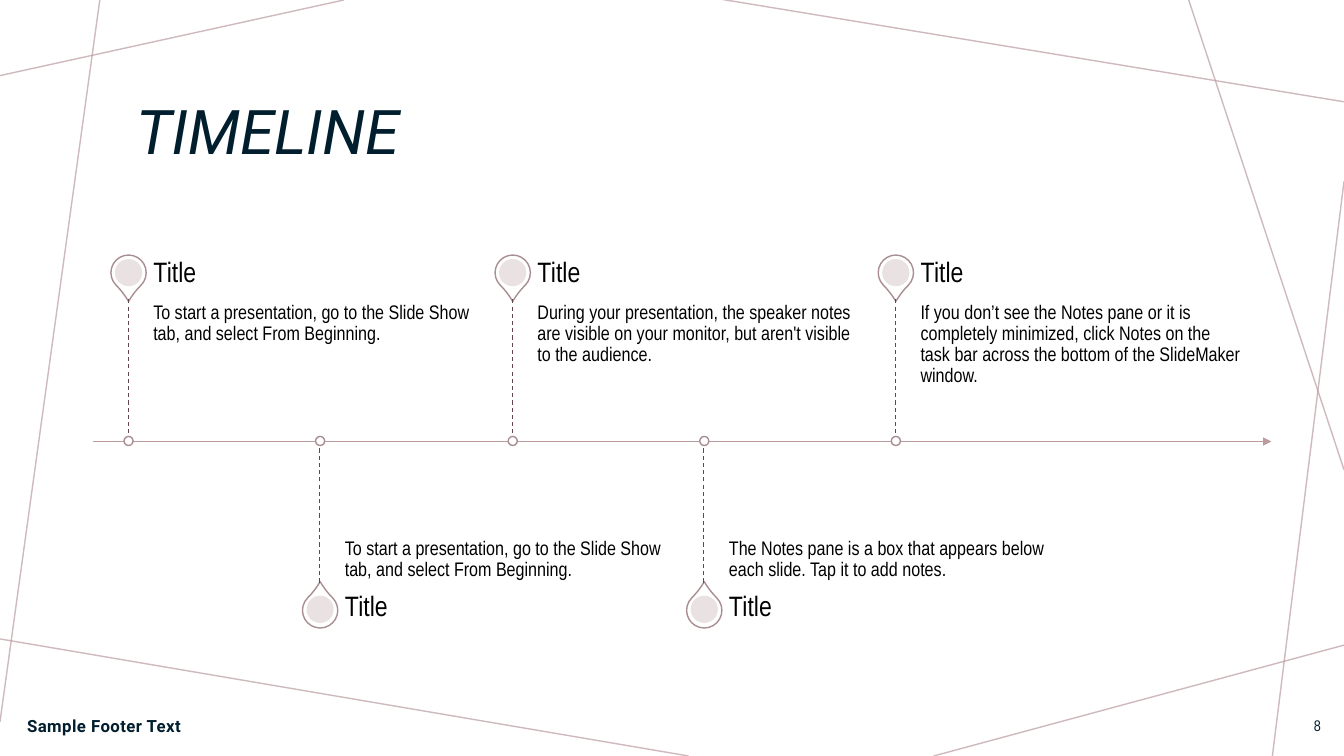
from dataclasses import dataclass

from lxml import etree
from pptx import Presentation
from pptx.dml.color import RGBColor
from pptx.enum.dml import MSO_LINE
from pptx.enum.shapes import MSO_CONNECTOR, MSO_SHAPE
from pptx.enum.text import MSO_ANCHOR, MSO_AUTO_SIZE, PP_ALIGN
from pptx.oxml.ns import qn
from pptx.util import Pt

STRAIGHT = MSO_CONNECTOR.STRAIGHT
ELLIPSE, TEARDROP = MSO_SHAPE.OVAL, MSO_SHAPE.TEAR
TOP, MIDDLE, BOTTOM = MSO_ANCHOR.TOP, MSO_ANCHOR.MIDDLE, MSO_ANCHOR.BOTTOM
LEFT, RIGHT = PP_ALIGN.LEFT, PP_ALIGN.RIGHT
DASH, NO_AUTOFIT = MSO_LINE.DASH, MSO_AUTO_SIZE.NONE

EMU_PER_PX = 9144  # 100 px to the inch
WIDTH, HEIGHT = 1333, 750
NAVY, BLACK, WHITE = "001E2E", "000000", "FFFFFF"
ROSE, PIN_ROSE, STEM_PLUM, DISC_GREY = "BA9CA0", "A98E91", "65464A", "E7DEDF"
HEADING_FONT, BODY_FONT = "Roboto", "Arial Narrow"

AXIS_Y = 438
FIRST_X, STEP_X = 127, 190.25
PIN_SIZE, DISC_SIZE, MARKER_SIZE = 35, 27, 9
TEXT_GAP, TEXT_WIDTH = 25, 321
BODY_HEIGHT, LABEL_HEIGHT = 141, 49


@dataclass(frozen=True)
class Box:
    left: int
    top: int
    width: int
    height: int


@dataclass(frozen=True)
class TextStyle:
    size: int
    font: str = BODY_FONT
    color: str = BLACK
    bold: bool = False
    italic: bool = False
    align: PP_ALIGN = LEFT
    anchor: MSO_ANCHOR = MIDDLE
    line_spacing: float = 0.9
    margins: tuple[int, int] = (0, 0)


@dataclass(frozen=True)
class Side:
    """Vertical places of a milestone above or below the axis."""
    pin_top: int
    disc_top: int
    body_top: int
    label_top: int
    stem_end: int
    rotation: int
    anchor: MSO_ANCHOR


ABOVE = Side(253, 257, 297, 247, 297, 135, TOP)
BELOW = Side(588, 591, 438, 578, 578, 315, BOTTOM)

SLIDE_SHOW_TIP = ("To start a presentation, go to the Slide Show tab, "
                  "and select From Beginning.")
MILESTONES = [
    (ABOVE, SLIDE_SHOW_TIP),
    (BELOW, SLIDE_SHOW_TIP),
    (ABOVE, "During your presentation, the speaker notes are visible on your "
            "monitor, but aren't visible to the audience."),
    (BELOW, "The Notes pane is a box that appears below each slide. "
            "Tap it to add notes."),
    (ABOVE, "If you don’t see the Notes pane or it is completely minimized, "
            "click Notes on the task bar across the bottom of the SlideMaker "
            "window."),
]

BACKGROUND_LINES = [
    (341, 0, 0, 75), (99, 0, 0, 716), (683, 750, -5, 633),
    (1333, 640, 926, 750), (1333, 180, 1262, 750),
    (1333, 466, 1179, 0), (1333, 101, 714, -1),
]

TITLE_STYLE = TextStyle(44, HEADING_FONT, NAVY, italic=True, margins=(10, 5))
FOOTER_STYLE = TextStyle(12, HEADING_FONT, NAVY, bold=True, line_spacing=1.0,
                         margins=(10, 5))
NUMBER_STYLE = TextStyle(11, color=NAVY, align=RIGHT, line_spacing=1.0,
                         margins=(10, 5))
LABEL_STYLE = TextStyle(20)


def px(value: float) -> int:
    return round(value * EMU_PER_PX)


def rgb(color: str) -> RGBColor:
    return RGBColor.from_string(color)


def set_opacity(element, percent: int) -> None:
    for color in element.iter(qn("a:srgbClr")):
        etree.SubElement(color, qn("a:alpha")).set("val", str(percent * 1000))


def add_line(slide, points: tuple, color: str, width: float = 1,
             dashed: bool = False, arrow: bool = False, opacity: int = 100):
    connector = slide.shapes.add_connector(STRAIGHT, *map(px, points))
    connector.line.color.rgb = rgb(color)
    connector.line.width = Pt(width)
    if dashed:
        connector.line.dash_style = DASH
    properties = connector._element.spPr
    if arrow:
        outline = properties.find(qn("a:ln"))
        etree.SubElement(outline, qn("a:tailEnd")).set("type", "triangle")
    if opacity < 100:
        set_opacity(properties, opacity)
    etree.SubElement(properties, qn("a:effectLst"))
    return connector


def add_round(slide, kind: MSO_SHAPE, left: int, top: int, size: int,
              fill: str, outline: str | None = None):
    shape = slide.shapes.add_shape(kind, px(left), px(top), px(size), px(size))
    shape.shadow.inherit = False
    shape.fill.solid()
    shape.fill.fore_color.rgb = rgb(fill)
    if outline:
        shape.line.color.rgb = rgb(outline)
        shape.line.width = Pt(1)
    else:
        shape.line.fill.background()
    return shape


def write_text(shape, text: str, style: TextStyle) -> None:
    frame = shape.text_frame
    frame.word_wrap = True
    frame.auto_size = NO_AUTOFIT
    frame.vertical_anchor = style.anchor
    side, end = map(px, style.margins)
    frame.margin_left = frame.margin_right = side
    frame.margin_top = frame.margin_bottom = end
    paragraph = frame.paragraphs[0]
    paragraph.text = text
    paragraph.alignment = style.align
    paragraph.line_spacing = style.line_spacing
    font = paragraph.font
    font.name, font.size = style.font, Pt(style.size)
    font.bold, font.italic = style.bold, style.italic
    font.color.rgb = rgb(style.color)


def add_text(slide, box: Box, text: str, style: TextStyle):
    shape = slide.shapes.add_textbox(px(box.left), px(box.top),
                                     px(box.width), px(box.height))
    write_text(shape, text, style)
    return shape


def add_milestone(slide, center: int, side: Side, body: str) -> None:
    pin = add_round(slide, TEARDROP, center - PIN_SIZE // 2, side.pin_top,
                    PIN_SIZE, WHITE, PIN_ROSE)
    pin.adjustments[0] = 1.15
    pin.rotation = side.rotation
    disc = add_round(slide, ELLIPSE, center - DISC_SIZE // 2, side.disc_top,
                     DISC_SIZE, DISC_GREY)
    set_opacity(disc._element.spPr, 90)

    text_left = center + TEXT_GAP
    add_text(slide, Box(text_left, side.body_top, TEXT_WIDTH, BODY_HEIGHT),
             body, TextStyle(14, anchor=side.anchor, margins=(0, 3)))
    add_text(slide, Box(text_left, side.label_top, TEXT_WIDTH, LABEL_HEIGHT),
             "Title", LABEL_STYLE)

    add_line(slide, (center, side.stem_end, center, AXIS_Y), STEM_PLUM, 0.75,
             dashed=True)
    add_round(slide, ELLIPSE, center - MARKER_SIZE // 2,
              AXIS_Y - MARKER_SIZE // 2 - 1, MARKER_SIZE, WHITE, PIN_ROSE)


def main() -> None:
    presentation = Presentation()
    presentation.slide_width, presentation.slide_height = px(WIDTH), px(HEIGHT)
    slide = presentation.slides.add_slide(presentation.slide_layouts[5])

    # Background lines
    for points in BACKGROUND_LINES:
        add_line(slide, points, ROSE, opacity=70)

    # Title
    title = slide.shapes.title
    title.left, title.top = px(125), px(58)
    title.width, title.height = px(1083), px(151)
    write_text(title, "TIMELINE", TITLE_STYLE)

    # Timeline
    add_line(slide, (92, AXIS_Y, 1261, AXIS_Y), ROSE, arrow=True)
    for index, (side, body) in enumerate(MILESTONES):
        add_milestone(slide, round(FIRST_X + index * STEP_X), side, body)

    # Footer and slide number
    footer = add_text(slide, Box(17, 700, 492, 40), "Sample Footer Text",
                      FOOTER_STYLE)
    run = footer.text_frame.paragraphs[0].runs[0]
    run._r.get_or_add_rPr().set("spc", "30")
    add_text(slide, Box(1269, 700, 51, 40), "8", NUMBER_STYLE)

    presentation.save("out.pptx")


if __name__ == "__main__":
    main()
